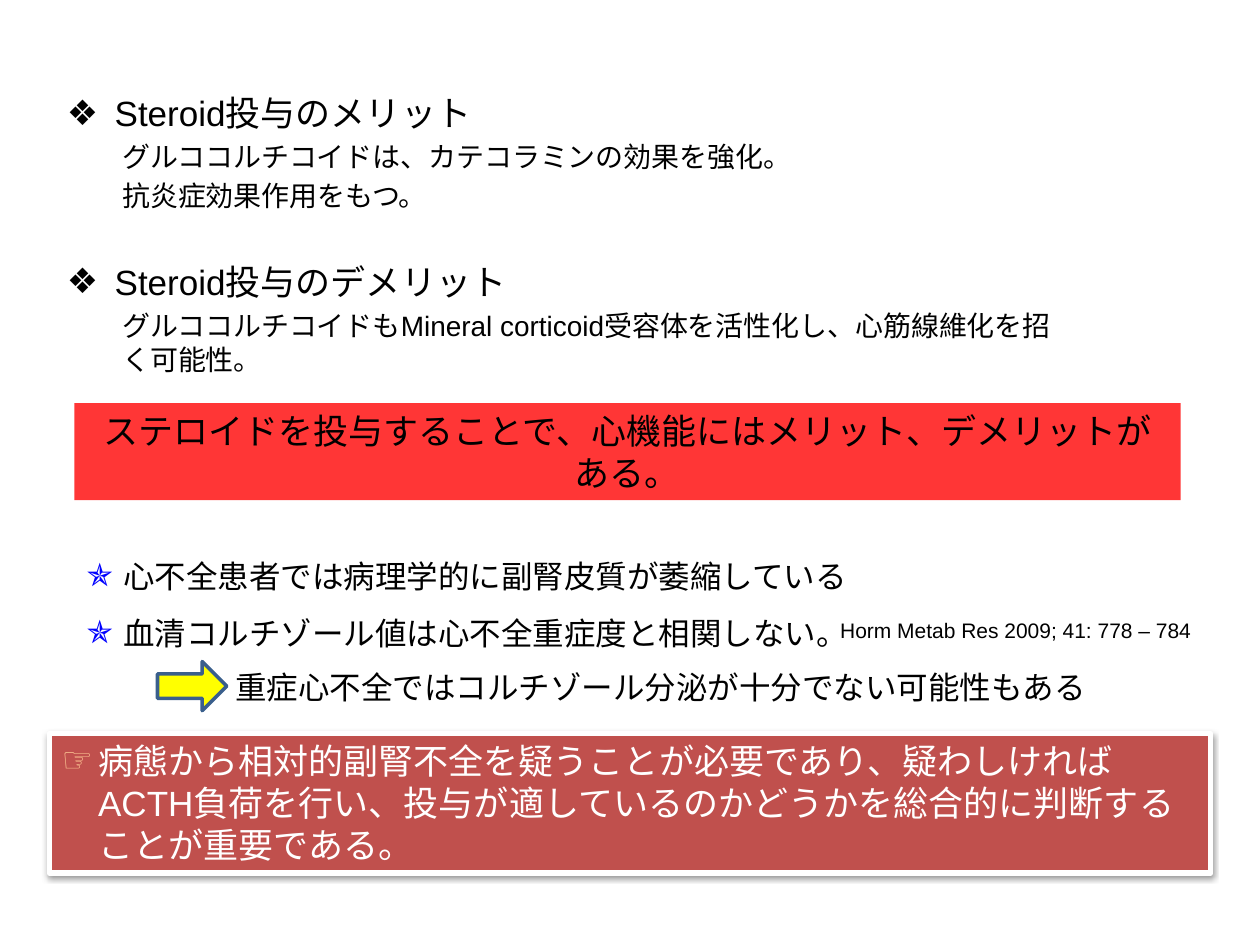
from lxml.etree import SubElement
from pptx import Presentation
from pptx.dml.color import RGBColor
from pptx.enum.shapes import MSO_SHAPE
from pptx.enum.text import MSO_ANCHOR, MSO_AUTO_SIZE, PP_ALIGN
from pptx.oxml.ns import qn
from pptx.util import Inches, Pt


def paint(fill, colour):
    fill.solid()
    fill.fore_color.rgb = RGBColor.from_string(colour)


def write(frame, text, size=20, colour="000000", align=PP_ALIGN.LEFT, level=0,
          margin=0, hang=0, before=0, spacing=1.0, bullet=None, bullet_colour="000000"):
    first = frame.paragraphs[0]
    paragraph = frame.add_paragraph() if first.runs else first
    paragraph.level = level
    paragraph.alignment = align
    paragraph.line_spacing = spacing
    paragraph.space_before = Pt(before)
    run = paragraph.add_run()
    run.text = text
    run.font.size = Pt(size)
    run.font.name = "Arial"
    paint(run.font.fill, colour)
    properties = paragraph._p.get_or_add_pPr()
    properties.set("marL", str(Inches(margin)))
    properties.set("indent", str(-Inches(hang)))
    if bullet:
        tint = SubElement(properties, qn("a:buClr"))
        SubElement(tint, qn("a:srgbClr"), val=bullet_colour)
        SubElement(properties, qn("a:buFont"), typeface="Arial")
        SubElement(properties, qn("a:buChar"), char=bullet)
    else:
        SubElement(properties, qn("a:buNone"))


prs = Presentation()
prs.slide_width = Inches(10)
prs.slide_height = Inches(7.5)
col = prs.slide_width // 1000
row = prs.slide_height // 750

slide = prs.slides.add_slide(prs.slide_layouts[3])
title, merits, demerits = slide.placeholders
title.element.getparent().remove(title.element)

effects = [
    (merits, 68, 787, 126, "Steroid投与のメリット",
     ["グルココルチコイドは、カテコラミンの効果を強化。", "抗炎症効果作用をもつ。"]),
    (demerits, 202, 803, 110, "Steroid投与のデメリット",
     ["グルココルチコイドもMineral corticoid受容体を活性化し、心筋線維化を招く可能性。"]),
]
for body, top, width, height, heading, details in effects:
    body.left, body.top = 43 * col, top * row
    body.width, body.height = width * col, height * row
    paint(body.fill, "FFFFFF")
    body.text_frame.auto_size = MSO_AUTO_SIZE.NONE
    body.text_frame.vertical_anchor = MSO_ANCHOR.TOP
    write(body.text_frame, heading, margin=0.38, hang=0.38, before=4, bullet="❖")
    for detail in details:
        write(body.text_frame, detail, size=16, level=1, margin=0.44, before=3.2)

conclusion = slide.shapes.add_shape(
    MSO_SHAPE.RECTANGLE, 39 * col, 582 * row, 922 * col, 111 * row)
paint(conclusion.fill, "C0504D")
paint(conclusion.line.fill, "FFFFFF")
conclusion.line.width = Pt(3)
conclusion.shadow.inherit = False
shadow = SubElement(conclusion._element.spPr.find(qn("a:effectLst")), qn("a:outerShdw"),
                    blurRad=str(Pt(3.1)), dist=str(Pt(1.6)), dir="5400000", rotWithShape="0")
shade = SubElement(shadow, qn("a:srgbClr"), val="000000")
SubElement(shade, qn("a:alpha"), val="38000")
write(conclusion.text_frame,
      "病態から相対的副腎不全を疑うことが必要であり、疑わしければACTH負荷を行い、"
      "投与が適しているのかどうかを総合的に判断することが重要である。",
      colour="FFFFFF", margin=0.29, hang=0.29, bullet="☞", bullet_colour="FAC090")

summary = slide.shapes.add_shape(
    MSO_SHAPE.RECTANGLE, 59 * col, 320 * row, 878 * col, 77 * row)
paint(summary.fill, "FF0000")
SubElement(summary._element.spPr.find(qn("a:solidFill"))[0], qn("a:alpha"), val="79000")
summary.line.fill.background()
summary.shadow.inherit = False
write(summary.text_frame, "ステロイドを投与することで、心機能にはメリット、デメリットがある。",
      align=PP_ALIGN.CENTER)

for banner in (conclusion, summary):
    banner.text_frame.word_wrap = True
    banner.text_frame.vertical_anchor = MSO_ANCHOR.TOP

implication = slide.shapes.add_textbox(177 * col, 525 * row, 702 * col, 40 * row)
implication.text_frame.word_wrap = False
write(implication.text_frame, "重症心不全ではコルチゾール分泌が十分でない可能性もある", size=18)

findings = slide.shapes.add_textbox(59 * col, 422 * row, 777 * col, 98 * row)
findings.text_frame.word_wrap = True
for finding in ("心不全患者では病理学的に副腎皮質が萎縮している",
                "血清コルチゾール値は心不全重症度と相関しない。"):
    write(findings.text_frame, finding, size=18, margin=0.29, hang=0.29,
          spacing=1.5, bullet="✯", bullet_colour="0000FF")

arrow = slide.shapes.add_shape(
    MSO_SHAPE.DOWN_ARROW, 133 * col, 517 * row, 39 * col, 55 * row)
arrow.rotation = 270
paint(arrow.fill, "FFFF00")
paint(arrow.line.fill, "3A5F8C")
arrow.line.width = Pt(2)
arrow.shadow.inherit = False

citation = slide.shapes.add_textbox(657 * col, 485 * row, 326 * col, 30 * row)
citation.text_frame.word_wrap = False
write(citation.text_frame, "Horm Metab Res 2009; 41: 778 – 784", size=12)

prs.save("out.pptx")
